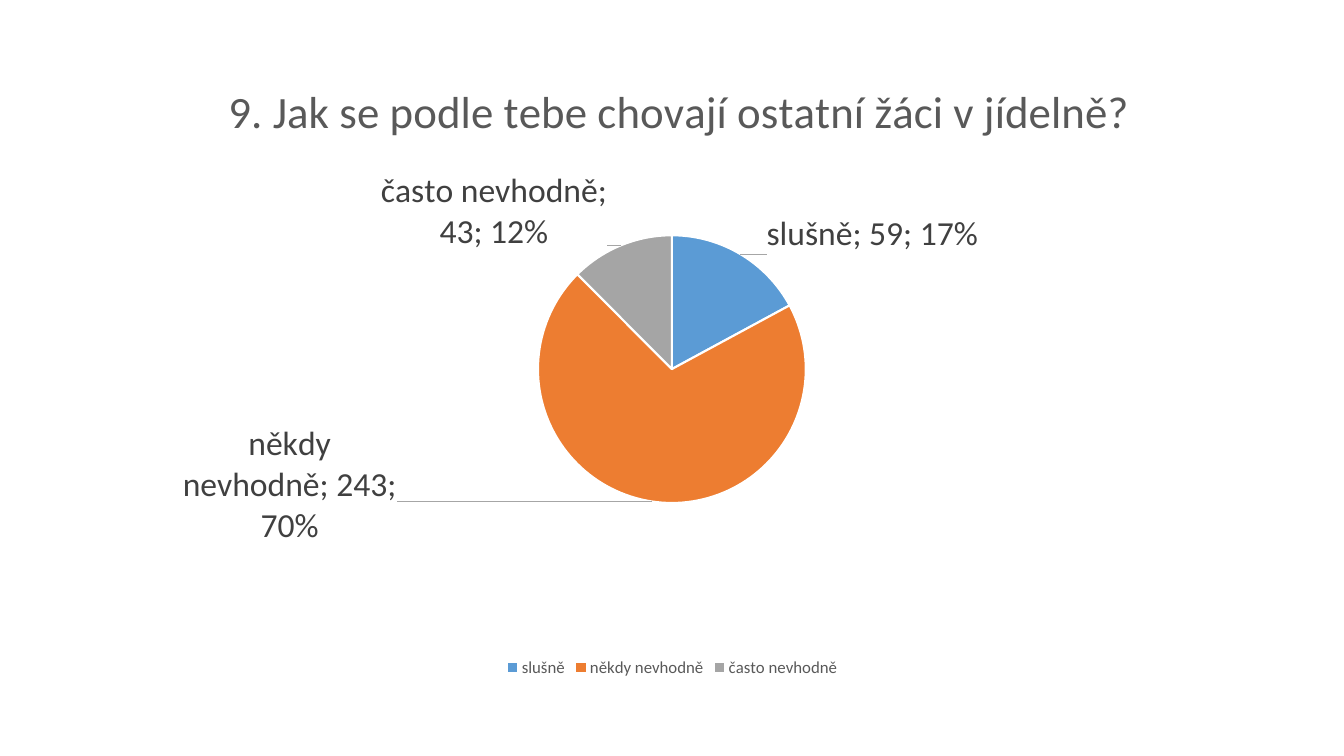
import dataclasses

import pptx
import pptx.chart.data
import pptx.dml.color
import pptx.enum.chart
import pptx.oxml
import pptx.oxml.ns
import pptx.util
from pptx.util import Inches


@dataclasses.dataclass(frozen=True)
class Theme:
    face: str = "Calibri"
    head: int = 32
    label: int = 24
    key: int = 12
    soft: str = "595959"
    dark: str = "404040"
    line: str = "A6A6A6"
    edge: str = "FFFFFF"


THEME = Theme()
TITLE = "9. Jak se podle tebe chovají ostatní žáci v jídelně?"

# Answer, votes, slice colour, label shift as a share of the chart
ROWS = [
    ("slušně", 59, "5B9BD5", (0.02, 0.01)),
    ("někdy nevhodně", 243, "ED7D31", (-0.22, -0.13)),
    ("často nevhodně", 43, "A5A5A5", (-0.01, 0.02)),
]


def color(code):
    return pptx.dml.color.RGBColor.from_string(code)


def style(font, size, code):
    font.name = THEME.face
    font.size = pptx.util.Pt(size)
    font.bold = False
    font.color.rgb = color(code)


def node(text):
    spaces = pptx.oxml.ns.nsdecls("c", "a")
    return pptx.oxml.parse_xml(text.replace(">", f" {spaces}>", 1))


def layout(x, y, size=None):
    """Manual layout; a size marks the inner plot area."""
    parts = [("xMode", "edge"), ("yMode", "edge")] if size else []
    if size:
        parts.insert(0, ("layoutTarget", "inner"))
    parts += [("x", x), ("y", y)]
    if size:
        parts += zip("wh", size)
    body = "".join(f'<c:{tag} val="{val}"/>' for tag, val in parts)
    return node(f"<c:layout><c:manualLayout>{body}</c:manualLayout></c:layout>")


def add_title(chart):
    frame = chart.chart_title.text_frame
    run = frame.paragraphs[0].add_run()
    run.text = TITLE
    style(run.font, THEME.head, THEME.soft)
    chart.chart_title.include_text_in_layout = False
    title = chart.element.xpath("c:chart/c:title")[0]
    for old in title.xpath("c:layout"):
        title.remove(old)
    place = node('<c:layout><c:manualLayout><c:xMode val="edge"/>'
                 '<c:yMode val="edge"/><c:x val="0.11"/><c:y val="0.05"/>'
                 '</c:manualLayout></c:layout>')
    title.xpath("c:tx")[0].addnext(place)


def add_key(chart):
    chart.has_legend = True
    chart.legend.position = pptx.enum.chart.XL_LEGEND_POSITION.BOTTOM
    chart.legend.include_in_layout = False
    style(chart.legend.font, THEME.key, THEME.soft)


def paint(series):
    for point, row in zip(series.points, ROWS):
        fill = point.format.fill
        fill.solid()
        fill.fore_color.rgb = color(row[2])
        line = point.format.line
        line.color.rgb = color(THEME.edge)
        line.width = pptx.util.Pt(1.5)


def add_labels(series):
    spot = pptx.enum.chart.XL_LABEL_POSITION.OUTSIDE_END
    labels = series.data_labels
    labels.show_value = True
    labels.show_category_name = True
    labels.show_percentage = True
    labels.position = spot
    style(labels.font, THEME.label, THEME.dark)

    # Shift each label away from its slice
    for point, row in zip(series.points, ROWS):
        label = point.data_label
        style(label.font, THEME.label, THEME.dark)
        label.position = spot
    root = series.data_labels.font and series.points and series
    group = root.format and chart_labels(series)
    for item, row in zip(group.xpath("c:dLbl"), ROWS):
        item.xpath("c:idx")[0].addnext(layout(*row[3]))
        for tag in ("showVal", "showCatName", "showPercent"):
            item.xpath(f"c:{tag}")[0].set("val", "1")
        item.append(node("<c:separator>; </c:separator>"))

    # Separator and leader lines
    for old in group.xpath("c:showLeaderLines"):
        group.remove(old)
    group.append(node("<c:separator>; </c:separator>"))
    group.append(node('<c:showLeaderLines val="1"></c:showLeaderLines>'))
    group.append(node(
        '<c:leaderLines><c:spPr><a:ln w="9525"><a:solidFill>'
        f'<a:srgbClr val="{THEME.line}"/></a:solidFill></a:ln></c:spPr>'
        '</c:leaderLines>'))


def chart_labels(series):
    return series._element.xpath("c:dLbls")[0]


def add_pie(slide):
    data = pptx.chart.data.CategoryChartData()
    data.categories = [row[0] for row in ROWS]
    data.add_series(TITLE, [row[1] for row in ROWS])
    chart = slide.shapes.add_chart(
        pptx.enum.chart.XL_CHART_TYPE.PIE,
        Inches(0.92), Inches(0.4), Inches(11.5), Inches(6.36), data).chart
    chart.font.name = THEME.face
    chart.font.size = pptx.util.Pt(10)
    plot = chart.plots[0]
    plot.vary_by_categories = True
    area = chart.element.xpath("c:chart/c:plotArea")[0]
    for old in area.xpath("c:layout"):
        area.remove(old)
    area.insert(0, layout(0.384, 0.304, (0.231, 0.418)))
    add_title(chart)
    add_key(chart)
    paint(plot.series[0])
    add_labels(plot.series[0])


def main():
    deck = pptx.Presentation()
    deck.slide_width = Inches(13.33)
    deck.slide_height = Inches(7.5)
    add_pie(deck.slides.add_slide(deck.slide_layouts[6]))
    deck.save("out.pptx")


if __name__ == "__main__":
    main()
